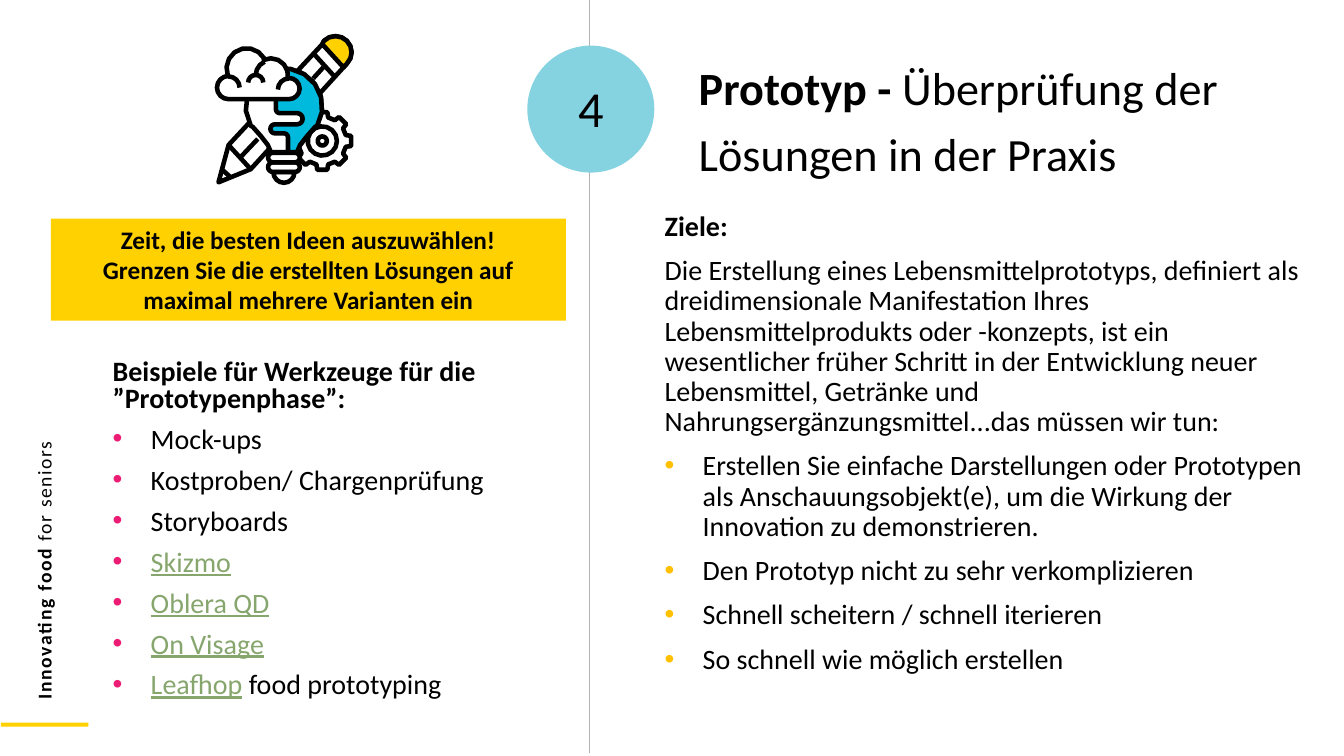
from dataclasses import dataclass
from math import cos, radians, sin

from lxml import etree
from pptx import Presentation
from pptx import util as u
from pptx.dml.color import RGBColor
from pptx.enum import shapes, text
from pptx.oxml.ns import qn


@dataclass(frozen=True)
class Theme:
    font: str = "Calibri"
    black: str = "000000"
    white: str = "FFFFFF"
    yellow: str = "FFD100"
    aqua: str = "85D2E1"
    blue: str = "00BADE"
    grey: str = "B3B3B3"
    link: str = "87A66E"
    pink_bullet: str = "EC1C74"
    amber_bullet: str = "FFC000"
    side_size: int = 14
    banner_size: int = 18
    body_size: int = 20
    title_size: int = 33
    number_size: int = 36


THEME = Theme()
LINK = {"color": THEME.link, "underline": True}
BOLD = {"bold": True}


# ---- Shared helpers ----
def cm_box(box):
    return [u.Cm(value) for value in box]


def paint(shape, fill=None, line=None, width=1):
    shape.shadow.inherit = False
    for part, color in ((shape.fill, fill), (shape.line.fill, line)):
        if color:
            part.solid()
            part.fore_color.rgb = RGBColor.from_string(color)
        else:
            part.background()
    if line:
        shape.line.width = u.Pt(width)


def add_block(slide, kind, box, fill):
    shape = slide.shapes.add_shape(kind, *cm_box(box))
    paint(shape, fill)
    return shape


def add_bullet(paragraph, color):
    properties = paragraph._p.get_or_add_pPr()
    indent = u.Cm(0.96)
    properties.set("marL", str(indent))
    properties.set("indent", str(-indent))
    bullet_color = etree.SubElement(properties, qn("a:buClr"))
    etree.SubElement(bullet_color, qn("a:srgbClr"), val=color)
    etree.SubElement(properties, qn("a:buFont"), typeface="Arial")
    etree.SubElement(properties, qn("a:buChar"), char="•")


def write(frame, paragraphs, size, spacing=1.0, before=0, align=text.PP_ALIGN.LEFT,
          bullet=None, tracking=None):
    """Each paragraph is (has_bullet, [(words, format), ...])."""
    frame.word_wrap = True
    for index, (has_bullet, runs) in enumerate(paragraphs):
        paragraph = frame.paragraphs[0] if index == 0 else frame.add_paragraph()
        layout = {"alignment": align, "line_spacing": spacing,
                  "space_before": u.Pt(before if index else 0)}
        for name, value in layout.items():
            setattr(paragraph, name, value)
        if has_bullet:
            add_bullet(paragraph, bullet)
        for words, style in runs:
            run = paragraph.add_run()
            run.text = words
            values = {"name": THEME.font, "size": u.Pt(size), "bold": False, **style}
            color = values.pop("color", THEME.black)
            for name, value in values.items():
                setattr(run.font, name, value)
            run.font.color.rgb = RGBColor.from_string(color)
            if tracking:
                run._r.get_or_add_rPr().set("spc", str(tracking))


def add_text(slide, box, paragraphs, size, **options):
    shape = slide.shapes.add_textbox(*cm_box(box))
    write(shape.text_frame, paragraphs, size, **options)
    return shape


# ---- Regions ----
def add_divider(slide, box):
    left, top, width, height = box
    line = slide.shapes.add_connector(
        shapes.MSO_CONNECTOR.STRAIGHT, *cm_box((left, top, left + width, top + height)))
    line.line.color.rgb = RGBColor.from_string(THEME.grey)
    line.line.width = u.Pt(1)
    etree.SubElement(line._element.spPr, qn("a:effectLst"))


def add_number(slide, box):
    left, top, width, height = box
    add_block(slide, shapes.MSO_SHAPE.OVAL, box, THEME.aqua)
    add_text(slide, (left, top + 0.84, width, height - 0.81), [(False, [("4", {})])],
             THEME.number_size, spacing=0.9, align=text.PP_ALIGN.CENTER)


def add_side_label(slide, box):
    left, top, width, height = box
    add_block(slide, shapes.MSO_SHAPE.RECTANGLE, (left, top + height - 0.1, width, 0.1),
              THEME.yellow)
    length, depth = 19.15, 0.86
    center_x, center_y = left + 1.09, top + height - 10.01
    label = add_text(slide, (center_x - length / 2, center_y - depth / 2, length, depth),
                     [(False, [("Innovating food ", BOLD), ("for seniors", {})])],
                     THEME.side_size, tracking=110)
    label.rotation = 270


def add_banner(slide, box):
    banner = add_block(slide, shapes.MSO_SHAPE.RECTANGLE, box, THEME.yellow)
    banner.text_frame.vertical_anchor = text.MSO_ANCHOR.MIDDLE
    sentences = ("Zeit, die besten Ideen auszuwählen!",
                 "Grenzen Sie die erstellten Lösungen auf maximal mehrere Varianten ein")
    write(banner.text_frame, [(False, [(words, BOLD)]) for words in sentences],
          THEME.banner_size, align=text.PP_ALIGN.CENTER)


def add_tools(slide, box):
    tools = [[("Mock-ups", {})], [("Kostproben/ Chargenprüfung", {})], [("Storyboards", {})],
             [("Skizmo", LINK)], [("Oblera QD", LINK)], [("On Visage", LINK)],
             [("Leafhop", LINK), (" food prototyping", {})]]
    heading = [("Beispiele für Werkzeuge für die ”Prototypenphase”:", BOLD)]
    add_text(slide, box, [(False, heading)] + [(True, runs) for runs in tools],
             THEME.body_size, spacing=0.8, before=10, bullet=THEME.pink_bullet)


def add_goals(slide, box):
    goals = ("Erstellen Sie einfache Darstellungen oder Prototypen als Anschauungsobjekt(e), "
             "um die Wirkung der Innovation zu demonstrieren.",
             "Den Prototyp nicht zu sehr verkomplizieren",
             "Schnell scheitern / schnell iterieren",
             "So schnell wie möglich erstellen")
    intro = ("Die Erstellung eines Lebensmittelprototyps, definiert als dreidimensionale "
             "Manifestation Ihres Lebensmittelprodukts oder -konzepts, ist ein wesentlicher "
             "früher Schritt in der Entwicklung neuer Lebensmittel, Getränke und "
             "Nahrungsergänzungsmittel...das müssen wir tun:")
    paragraphs = [(False, [("Ziele:", BOLD)]), (False, [(intro, {})])]
    add_text(slide, box, paragraphs + [(True, [(goal, {})]) for goal in goals],
             THEME.body_size, spacing=0.9, before=10, bullet=THEME.amber_bullet)


def arc(x, y, radius, start, end):
    steps = max(3, round(abs(end - start) / 24))
    angles = [radians(start + (end - start) * step / steps) for step in range(steps + 1)]
    return [(x + radius * cos(angle), y + radius * sin(angle)) for angle in angles]


def add_icon(slide, box):
    """Idea icon on a grid 137 units wide."""
    left, top, width, _ = box
    unit = width / 137

    def outline(*contours, fill=None):
        scaled = [[(u.Cm(left + x * unit), u.Cm(top + y * unit)) for x, y in points]
                  for points in contours]
        builder = slide.shapes.build_freeform(*scaled[0][0])
        for index, points in enumerate(scaled):
            if index:
                builder.move_to(*points[0])
            builder.add_line_segments(points[1:], close=fill is not None)
        paint(builder.convert_to_shape(), fill, THEME.black, 3.25)

    # Pencil
    cap = [(106, 10)] + arc(119, 18, 16, 225, 405) + [(127, 33)]
    outline([(3, 147), (13, 110)] + cap + [(35, 134)], fill=THEME.white)
    outline(cap, fill=THEME.yellow)
    outline([(98, 20), (118, 42)], [(97, 44), (107, 33)], [(13, 110), (35, 134)],
            [(25, 122), (42, 104)], [(6, 134), (14, 141)])
    # Gear
    gear = [(106 + radius * cos(radians(angle + turn)), 106 + radius * sin(radians(angle + turn)))
            for angle in range(0, 360, 45)
            for radius, turn in ((24, -14), (29, -10), (29, 10), (24, 14))]
    outline(gear, fill=THEME.white)
    outline(*[arc(106, 106, radius, 0, 360) for radius in (14.5, 4.5)], fill=THEME.white)
    # Bulb
    flank = [(37, 92), (45, 101), (52, 110), (55, 117)]
    right_flank = [(136 - x, y) for x, y in flank]
    outline(arc(68, 72, 38, 150, 390) + right_flank + flank[::-1], fill=THEME.white)
    wave = ([(72, 117)] + arc(68, 102.5, 4, 0, -90) + arc(59, 94, 4.5, 90, 270)
            + arc(81, 84, 5.5, 90, -90) + arc(64, 74.5, 4, 90, 180) + [(60, 35)])
    outline(arc(68, 72, 38, 258, 390) + right_flank + wave, fill=THEME.blue)
    rings = [arc(57, middle, 4.75, 90, 270) + arc(79, middle, 4.75, -90, 90)
             for middle in (122.5, 132)]
    outline(arc(68, 137, 10.5, 0, 180), *rings, fill=THEME.white)
    # Cloud
    outline(arc(13, 53, 11.5, 90, 270) + arc(31, 34, 20, 160, 330)
            + arc(55, 41, 17, 245, 370) + arc(73, 54, 10.5, 270, 450), fill=THEME.white)
    curls = ((13, 53, 11, 270, 360), (40, 48, 7.5, 180, 360),
             (55, 41, 15, 180, 245), (73, 55, 11, 180, 270))
    outline(*[arc(*curl) for curl in curls])


def main():
    presentation = Presentation()
    presentation.slide_width, presentation.slide_height = u.Cm(33.87), u.Cm(19.05)
    slide = presentation.slides.add_slide(presentation.slide_layouts[6])
    add_divider(slide, (14.86, -0.08, 0, 19.05))
    add_number(slide, (13.29, 1.15, 3.2, 3.2))
    add_side_label(slide, (0.02, 0, 2.21, 18.31))
    add_goals(slide, (16.5, 5.22, 16.81, 12.75))
    add_text(slide, (17.36, 1.09, 15.09, 4.57),
             [(False, [("Prototyp - ", BOLD), ("Überprüfung der Lösungen in der Praxis", {})])],
             THEME.title_size, spacing=1.2)
    add_tools(slide, (2.59, 8.95, 12.04, 9.55))
    add_banner(slide, (1.28, 5.51, 12.98, 2.57))
    add_icon(slide, (5.43, 0.86, 3.48, 3.81))
    presentation.save("out.pptx")


if __name__ == "__main__":
    main()
